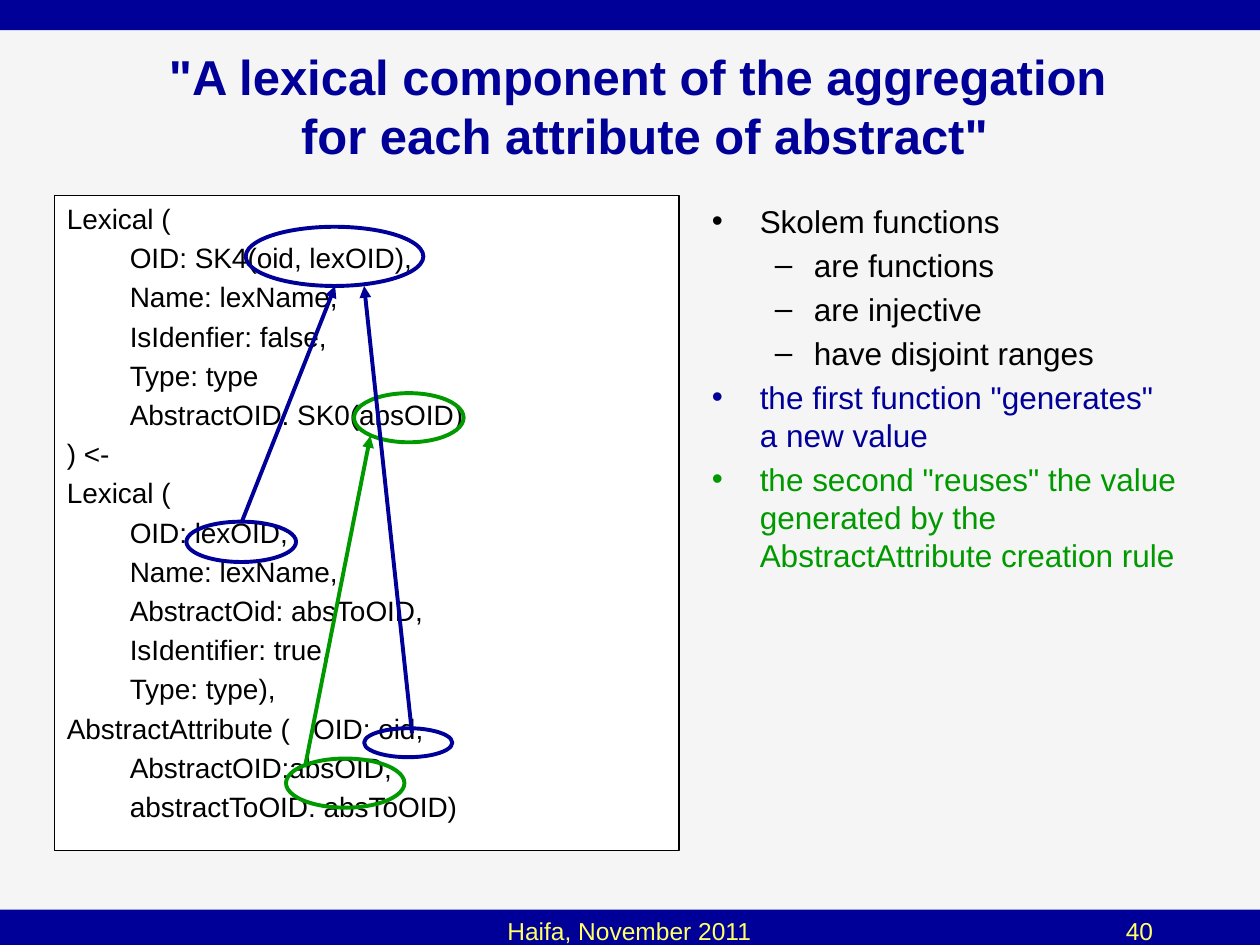
"""Build a slide on Skolem functions in a translation rule."""
import lxml.etree
import pptx
import pptx.dml.color
import pptx.enum.shapes
import pptx.enum.text
import pptx.oxml.ns
import pptx.util

Inches = pptx.util.Inches
Pt = pptx.util.Pt
qn = pptx.oxml.ns.qn
ALIGN = pptx.enum.text.PP_ALIGN
ANCHOR = pptx.enum.text.MSO_ANCHOR
SHAPE = pptx.enum.shapes.MSO_SHAPE

NAVY, GREEN, BLACK, WHITE = "000099", "009900", "000000", "FFFFFF"
PALE, YELLOW = "F5F5F5", "FFFF66"
INDENTS = [(0.38, -0.38), (0.81, -0.31)]

BARS = [(0, 7.22, 10, 0.36), (0, 0.11, 10, 0.13), (0, -0.01, 10, 0.14)]
TITLE = ['"A lexical component of the aggregation ', 'for each attribute of abstract"']
RULE = [
    (0, "Lexical ("),
    (1, "OID: SK4(oid, lexOID),"),
    (1, "Name: lexName,"),
    (1, "IsIdenfier: false,"),
    (1, "Type: type"),
    (1, "AbstractOID: SK0(absOID)"),
    (0, ") <-"),
    (0, "Lexical ("),
    (1, "OID: lexOID,"),
    (1, "Name: lexName,"),
    (1, "AbstractOid: absToOID,"),
    (1, "IsIdentifier: true,"),
    (1, "Type: type),"),
    (0, "AbstractAttribute (   OID: oid,"),
    (1, "AbstractOID:absOID,"),
    (1, "abstractToOID: absToOID)"),
]
NOTES = [
    (0, "Skolem functions", BLACK),
    (1, "are functions", BLACK),
    (1, "are injective", BLACK),
    (1, "have disjoint ranges", BLACK),
    (0, 'the first function "generates" a new value', NAVY),
    (0, 'the second "reuses" the value generated by the AbstractAttribute creation rule', GREEN),
]
RINGS = [
    (1.48, 4.14, 0.87, 0.32, NAVY),
    (1.95, 1.8, 1.41, 0.47, NAVY),
    (2.27, 6.02, 0.94, 0.39, GREEN),
    (2.81, 3.12, 0.87, 0.39, GREEN),
    (2.89, 5.78, 0.7, 0.23, NAVY),
]
ARROWS = [
    (1.92, 4.14, 2.66, 2.27, NAVY),
    (2.42, 6.09, 2.94, 3.46, GREEN),
    (3.27, 5.82, 2.89, 2.27, NAVY),
]


def paint(target, color):
    """Give a fill one solid colour."""
    target.solid()
    target.fore_color.rgb = pptx.dml.color.RGBColor.from_string(color)


def stroke(line, color, width):
    """Set the colour and width of a line."""
    paint(line.fill, color)
    line.width = Pt(width)


def write(para, text, size, color, bold=False):
    """Add one run of text to a paragraph."""
    run = para.add_run()
    run.text = text
    run.font.name = "Arial"
    run.font.size = Pt(size)
    run.font.bold = bold
    paint(run.font.fill, color)


def place(shape, left, top, width, height):
    """Move and size a placeholder."""
    shape.left, shape.top = Inches(left), Inches(top)
    shape.width, shape.height = Inches(width), Inches(height)


def add_title(slide):
    """Fill the title placeholder."""
    title = slide.shapes.title
    place(title, 0.43, 0.25, 9.37, 1.17)
    frame = title.text_frame
    frame.auto_size = pptx.enum.text.MSO_AUTO_SIZE.NONE
    frame.vertical_anchor = ANCHOR.MIDDLE
    para = frame.paragraphs[0]
    para.alignment = ALIGN.CENTER
    for index, text in enumerate(TITLE):
        if index:
            para.add_line_break()
        write(para, text, 28, NAVY, True)


def add_list(holder, box, items, size, marks=None):
    """Fill a body placeholder with levelled lines."""
    place(holder, *box)
    frame = holder.text_frame
    frame.auto_size = pptx.enum.text.MSO_AUTO_SIZE.NONE
    frame.vertical_anchor = ANCHOR.TOP
    for index, (level, text, color) in enumerate(items):
        para = frame.add_paragraph() if index else frame.paragraphs[0]
        para.level = level
        props = para._p.get_or_add_pPr()
        left, hang = INDENTS[level]
        props.set("marL", str(Inches(left)))
        props.set("indent", str(Inches(hang)))
        if marks:
            lxml.etree.SubElement(props, qn("a:buChar")).set("char", marks[level])
        else:
            lxml.etree.SubElement(props, qn("a:buNone"))
        para.space_before = Pt(0.2 * size if index else 0)
        write(para, text, size, color)


def add_label(slide, box, text, align):
    """Add a footer label."""
    frame = slide.shapes.add_textbox(*map(Inches, box)).text_frame
    frame.word_wrap = True
    para = frame.paragraphs[0]
    para.alignment = align
    write(para, text, 14, YELLOW)


def add_bar(slide, box):
    """Add a plain band across the slide."""
    bar = slide.shapes.add_shape(SHAPE.RECTANGLE, *map(Inches, box))
    bar.shadow.inherit = False
    paint(bar.fill, NAVY)
    bar.line.fill.background()


def add_ring(slide, left, top, width, height, color):
    """Add an open ellipse round a term."""
    box = map(Inches, (left, top, width, height))
    ring = slide.shapes.add_shape(SHAPE.OVAL, *box)
    ring.shadow.inherit = False
    ring.fill.background()
    stroke(ring.line, color, 2.25)


def add_arrow(slide, left, top, right, base, color):
    """Add a straight arrow between two points."""
    ends = map(Inches, (left, top, right, base))
    arrow = slide.shapes.add_connector(pptx.enum.shapes.MSO_CONNECTOR.STRAIGHT, *ends)
    stroke(arrow.line, color, 2.25)
    props = arrow._element.spPr
    head = lxml.etree.SubElement(props.find(qn("a:ln")), qn("a:tailEnd"))
    head.set("type", "triangle")
    lxml.etree.SubElement(props, qn("a:effectLst"))


def main():
    """Build and save the slide."""
    deck = pptx.Presentation()
    deck.slide_width, deck.slide_height = Inches(10), Inches(7.5)
    slide = deck.slides.add_slide(deck.slide_layouts[3])
    paint(slide.background.fill, PALE)
    for box in BARS:
        add_bar(slide, box)
    add_label(slide, (2.16, 7.22, 5.67, 0.5), "Haifa, November 2011", ALIGN.CENTER)
    add_label(slide, (7.91, 7.22, 1.34, 0.5), "40", ALIGN.RIGHT)
    add_title(slide)
    code, notes = slide.placeholders[1], slide.placeholders[2]
    paint(code.fill, WHITE)
    stroke(code.line, BLACK, 0.75)
    lines = [(level, text, BLACK) for level, text in RULE]
    add_list(code, (0.43, 1.55, 4.96, 5.2), lines, 16)
    add_list(notes, (5.55, 1.55, 3.89, 4.92), NOTES, 18, "•–")
    for ring in RINGS:
        add_ring(slide, *ring)
    for arrow in ARROWS:
        add_arrow(slide, *arrow)
    deck.save("out.pptx")


if __name__ == "__main__":
    main()
